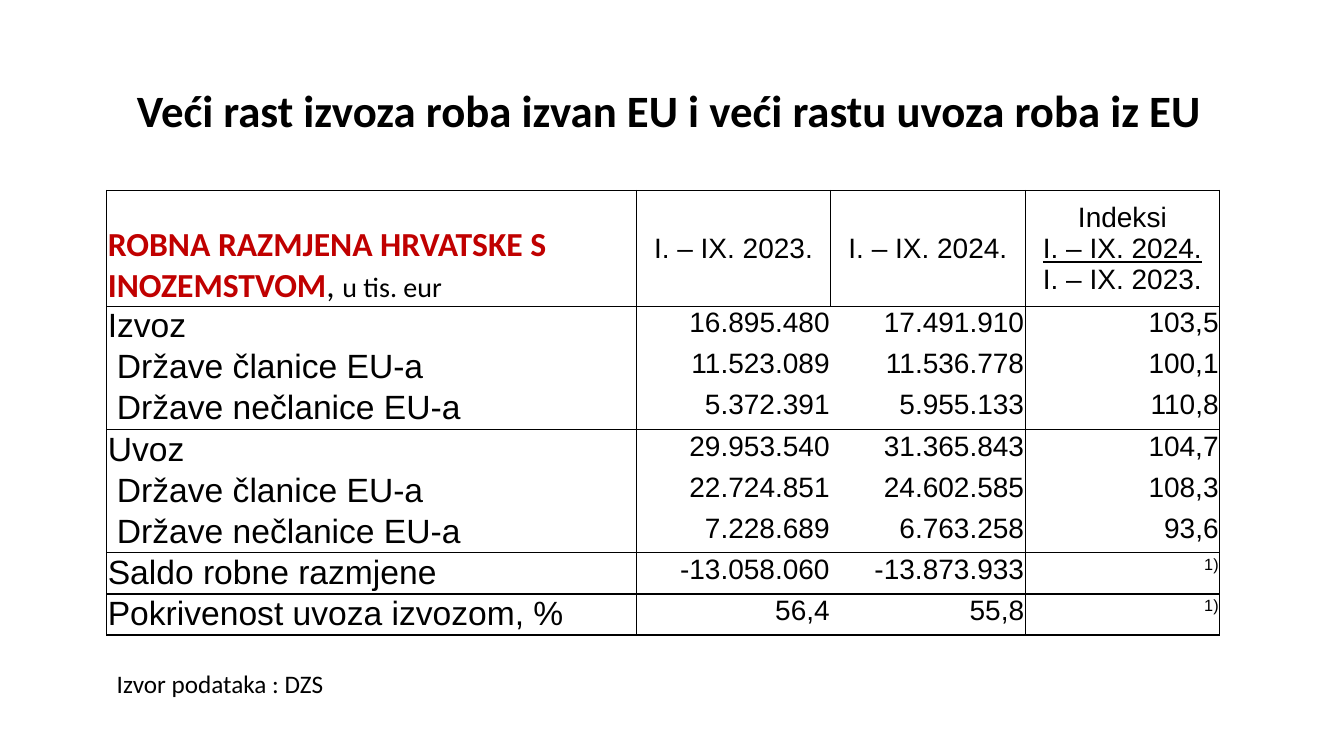
from lxml import etree
from pptx import Presentation
from pptx import util as u
from pptx.dml.color import RGBColor
from pptx.enum import text
from pptx.oxml import ns

Pt = u.Pt
LEFT, MID, RIGHT = text.PP_ALIGN.LEFT, text.PP_ALIGN.CENTER, text.PP_ALIGN.RIGHT
TOP, CENTER, BASE = (text.MSO_ANCHOR.TOP, text.MSO_ANCHOR.MIDDLE,
                     text.MSO_ANCHOR.BOTTOM)
WIDTHS = [378.2, 138.9, 138.9, 138.9]
HEAD, ROW = 82.8, 29.34
RULES = {0, 1, 4, 7, 8, 9}
PERIODS = ["I. – IX. 2023.", "I. – IX. 2024."]
DATA = [
    ("Izvoz", "16.895.480", "17.491.910", "103,5"),
    ("Države članice EU-a", "11.523.089", "11.536.778", "100,1"),
    ("Države nečlanice EU-a", "5.372.391", "5.955.133", "110,8"),
    ("Uvoz", "29.953.540", "31.365.843", "104,7"),
    ("Države članice EU-a", "22.724.851", "24.602.585", "108,3"),
    ("Države nečlanice EU-a", "7.228.689", "6.763.258", "93,6"),
    ("Saldo robne razmjene", "-13.058.060", "-13.873.933", "1)"),
    ("Pokrivenost uvoza izvozom, %", "56,4", "55,8", "1)"),
]


def paint(color, tone):
    color.rgb = RGBColor.from_string(tone)


def write(para, words, size, name="Arial", tone="000000", **style):
    run = para.add_run()
    run.text = words
    form = {"size": Pt(size), "name": name, "bold": False, **style}
    for key, value in form.items():
        setattr(run.font, key, value)
    paint(run.font.color, tone)
    return run


def setup(cell, align, anchor, inset=0.72):
    form = {"margin_left": Pt(inset), "margin_right": Pt(0.72),
            "margin_top": Pt(0.72), "margin_bottom": 0,
            "vertical_anchor": anchor}
    for key, value in form.items():
        setattr(cell, key, value)
    para = cell.text_frame.paragraphs[0]
    para.alignment = align
    return para


def border(cell, sides):
    props = cell._tc.get_or_add_tcPr()
    for side in "LRTB":
        width = sides[side]
        line = etree.SubElement(props, ns.qn("a:ln" + side), w=str(Pt(width)))
        if width:
            fill = etree.SubElement(line, ns.qn("a:solidFill"))
            etree.SubElement(fill, ns.qn("a:srgbClr"), val="000000")
        else:
            etree.SubElement(line, ns.qn("a:noFill"))
    cell.fill.background()


def edges(row, col):
    bars = [1, 0.5, 0.5 if row == 0 else 0, 0.5, 1]
    return {"L": bars[col], "R": bars[col + 1],
            "T": int(row in RULES), "B": int(row + 1 in RULES)}


def header(grid):
    para = setup(grid.cell(0, 0), LEFT, BASE)
    write(para, "ROBNA RAZMJENA HRVATSKE S INOZEMSTVOM", 24, "Calibri",
          "C00000", bold=True)
    write(para, ", ", 24, "Calibri")
    write(para, "u tis. eur", 20, "Calibri")
    for col, period in enumerate(PERIODS, 1):
        write(setup(grid.cell(0, col), MID, CENTER), period, 20)
    para = setup(grid.cell(0, 3), MID, CENTER)
    write(para, "Indeksi", 20)
    para.add_line_break()
    write(para, PERIODS[1], 20, underline=True)
    para.add_line_break()
    write(para, PERIODS[0], 20)


def body(grid):
    for row, (label, *values) in enumerate(DATA, 1):
        inset = 7.2 if label.startswith("Države") else 0.72
        write(setup(grid.cell(row, 0), LEFT, TOP, inset), label, 24)
        for col, value in enumerate(values, 1):
            run = write(setup(grid.cell(row, col), RIGHT, TOP), value, 20)
            if value == "1)":
                run.font._element.set("baseline", "30000")


def trade(slide, left, top):
    count = len(DATA) + 1
    frame = slide.shapes.add_table(
        count, len(WIDTHS), Pt(left), Pt(top), Pt(sum(WIDTHS)),
        Pt(HEAD + ROW * len(DATA)))
    grid = frame.table
    grid.first_row = grid.horz_banding = False
    for col, width in zip(grid.columns, WIDTHS):
        col.width = Pt(width)
    for index, row in enumerate(grid.rows):
        row.height = Pt(ROW if index else HEAD)
    header(grid)
    body(grid)
    for row in range(count):
        for col in range(len(WIDTHS)):
            border(grid.cell(row, col), edges(row, col))


def label(slide, box, words, size, bold=False):
    frame = slide.shapes.add_textbox(*map(Pt, box)).text_frame
    frame.word_wrap = False
    frame.auto_size = text.MSO_AUTO_SIZE.SHAPE_TO_FIT_TEXT
    write(frame.paragraphs[0], words, size, "Calibri", bold=bold)


def main():
    deck = Presentation()
    deck.slide_width, deck.slide_height = Pt(960), Pt(540)
    slide = deck.slides.add_slide(deck.slide_layouts[6])
    trade(slide, 76.3, 136.1)
    label(slide, (90.7, 55.4, 781.9, 46.1),
          "Veći rast izvoza roba izvan EU i veći rastu uvoza roba iz EU",
          32, True)
    label(slide, (76.3, 473.8, 163.4, 28.8), "Izvor podataka : DZS", 18)
    deck.save("out.pptx")


if __name__ == "__main__":
    main()
